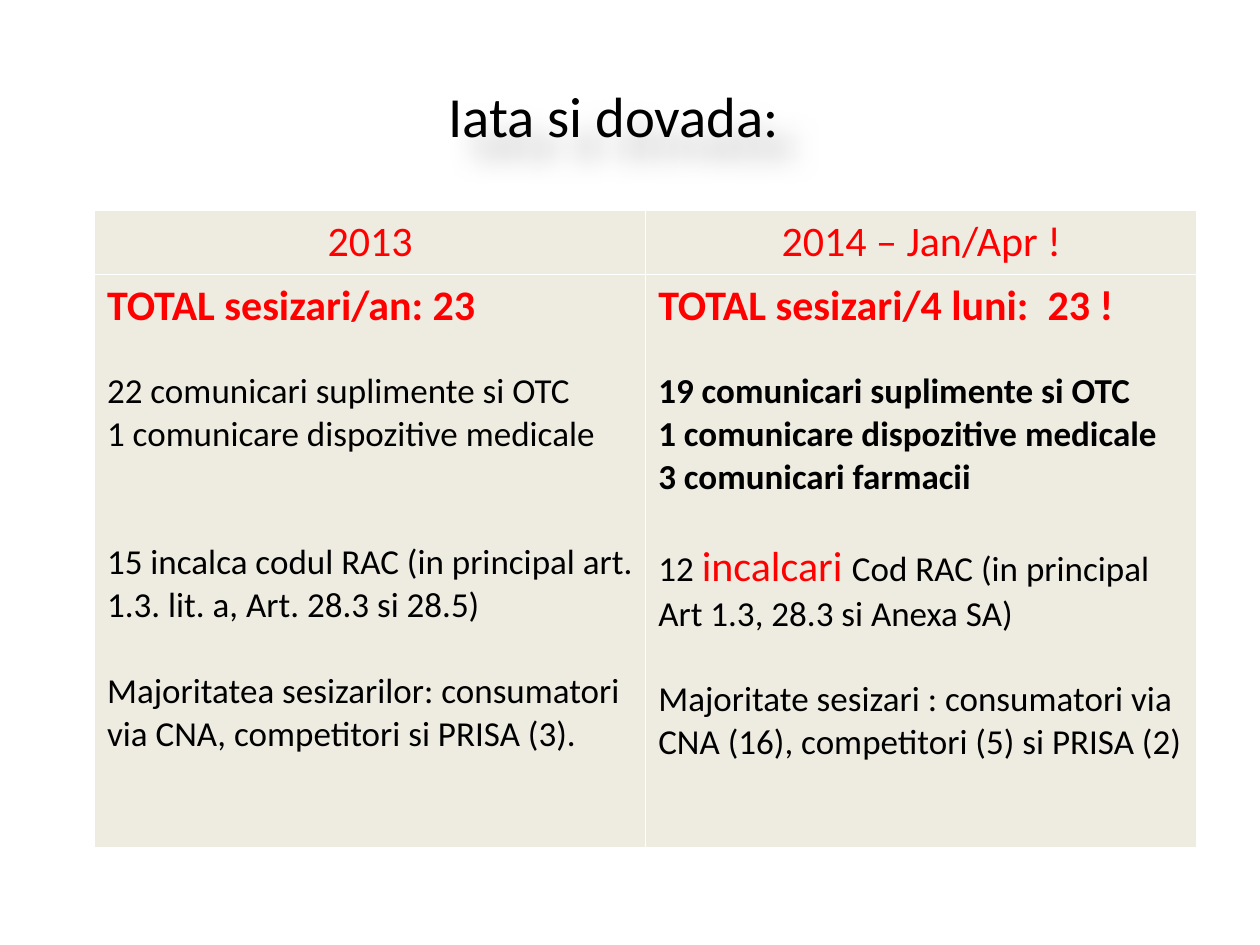
"""Build a slide that compares the complaints of 2013 with those of early 2014."""
from lxml.etree import SubElement
from pptx import Presentation
from pptx.dml.color import RGBColor
from pptx.enum.text import MSO_ANCHOR, PP_ALIGN
from pptx.oxml.ns import qn
from pptx.util import Inches, Pt

BLACK = RGBColor(0x00, 0x00, 0x00)
RED = RGBColor(0xFF, 0x00, 0x00)
CREAM = RGBColor(0xEE, 0xEC, 0xE1)
WHITE = RGBColor(0xFF, 0xFF, 0xFF)
FONT = "Calibri"
SMALL_GAP, GAP = 22, 24.4

HEADERS = ["2013", "2014 – Jan/Apr !"]
BODIES = [
    [
        (0, [("TOTAL sesizari/an: 23", 24, RED, True)]),
        (SMALL_GAP, [("22 comunicari suplimente si OTC", 20, BLACK, False)]),
        (0, [("1 comunicare dispozitive medicale", 20, BLACK, False)]),
        (2 * GAP, [("15 incalca codul RAC (in principal art. 1.3. lit. a, Art. 28.3 si 28.5)", 20, BLACK, False)]),
        (GAP, [("Majoritatea sesizarilor: consumatori via CNA, competitori si PRISA (3).", 20, BLACK, False)]),
    ],
    [
        (0, [("TOTAL sesizari/4 luni:  23 !", 24, RED, True)]),
        (SMALL_GAP, [("19 comunicari suplimente si OTC", 20, BLACK, True)]),
        (0, [("1 comunicare dispozitive medicale", 20, BLACK, True)]),
        (0, [("3 comunicari farmacii", 20, BLACK, True)]),
        (GAP, [
            ("12 ", 20, BLACK, False),
            ("incalcari ", 24, RED, False),
            ("Cod RAC (in principal Art 1.3, 28.3 si Anexa SA)", 20, BLACK, False),
        ]),
        (GAP, [("Majoritate sesizari : consumatori via CNA (16), competitori (5) si PRISA (2)", 20, BLACK, False)]),
    ],
]


def format_cell(cell):
    properties = cell._tc.get_or_add_tcPr()
    for side in ("lnL", "lnR", "lnT", "lnB"):
        line = SubElement(properties, qn(f"a:{side}"), w=str(Pt(1)))
        SubElement(SubElement(line, qn("a:solidFill")), qn("a:srgbClr"), val=str(WHITE))
    cell.fill.solid()
    cell.fill.fore_color.rgb = CREAM


def fill_cell(cell, lines, alignment):
    for index, (gap, spans) in enumerate(lines):
        para = cell.text_frame.add_paragraph() if index else cell.text_frame.paragraphs[0]
        para.alignment = alignment
        if gap:
            para.space_before = Pt(gap)
        for text, size, color, bold in spans:
            span = para.add_run()
            span.text = text
            span.font.name = FONT
            span.font.size = Pt(size)
            span.font.bold = bold
            span.font.color.rgb = color


deck = Presentation()
deck.slide_width, deck.slide_height = Inches(10), Inches(7.5)
page = deck.slides.add_slide(deck.slide_layouts[5])

title = page.shapes.title
title.left, title.top = Inches(0.17), Inches(0.58)
title.width, title.height = Inches(9.5), Inches(0.67)
title.text_frame.text = "Iata si dovada: "
title.text_frame.vertical_anchor = MSO_ANCHOR.MIDDLE
heading = title.text_frame.paragraphs[0]
heading.alignment = PP_ALIGN.CENTER
heading.font.name = FONT
heading.font.size = Pt(32.4)
heading.font.color.rgb = BLACK

effects = SubElement(title._element.spPr, qn("a:effectLst"))
shadow = SubElement(effects, qn("a:outerShdw"), blurRad=str(Pt(15)), dist=str(Pt(18)),
                    dir="2700000", sy="90000", rotWithShape="0")
shade = SubElement(shadow, qn("a:srgbClr"), val=str(BLACK))
SubElement(shade, qn("a:alpha"), val="25500")

table = page.shapes.add_table(2, 2, Inches(0.75), Inches(1.67), Inches(8.75), Inches(5.05)).table
table.first_row = False
table.horz_banding = False
table.rows[0].height, table.rows[1].height = Inches(0.5), Inches(4.55)

for column, (header, body) in enumerate(zip(HEADERS, BODIES)):
    fill_cell(table.cell(0, column), [(0, [(header, 24, RED, False)])], PP_ALIGN.CENTER)
    fill_cell(table.cell(1, column), body, PP_ALIGN.LEFT)
for cell in table.iter_cells():
    format_cell(cell)

deck.save("out.pptx")
